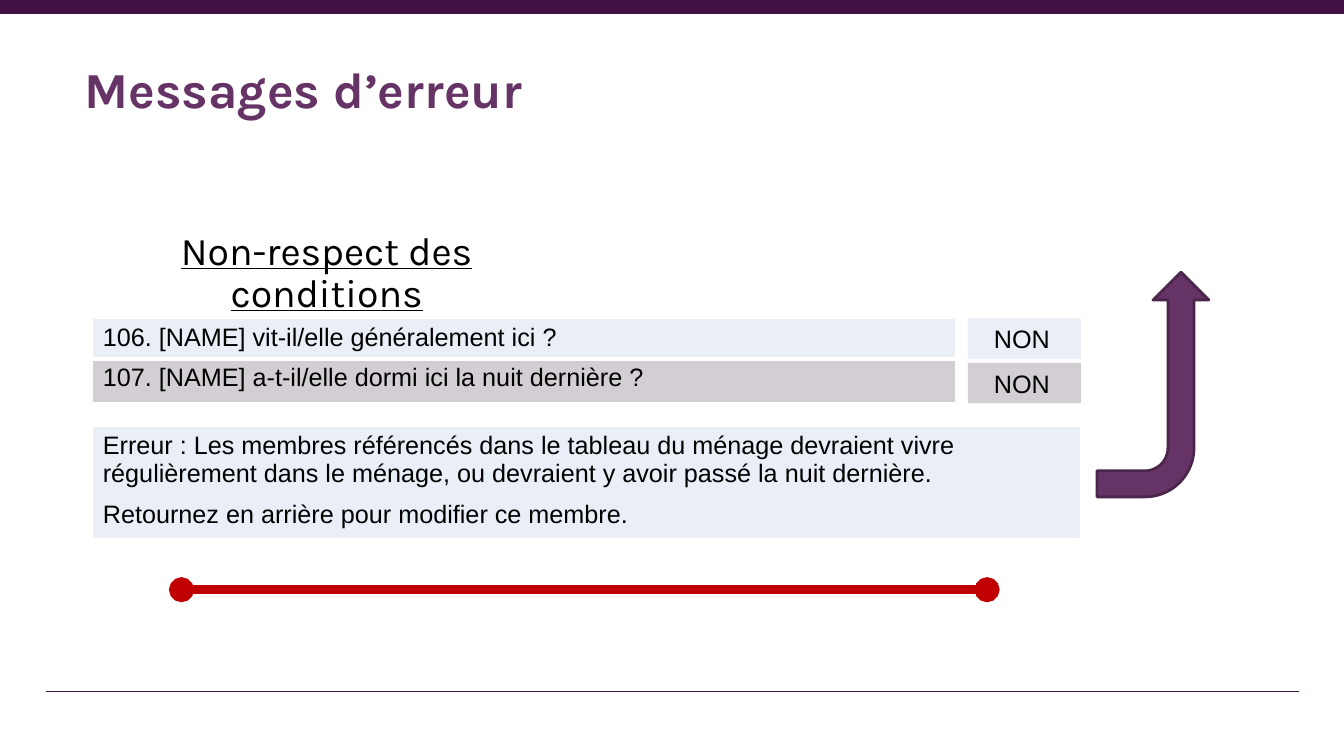
from dataclasses import dataclass

from lxml.etree import SubElement
from pptx import Presentation
from pptx.dml.color import RGBColor
from pptx.enum.shapes import MSO_CONNECTOR, MSO_SHAPE
from pptx.enum.text import PP_ALIGN
from pptx.oxml.ns import qn
from pptx.util import Inches, Pt


@dataclass(frozen=True)
class Theme:
    """Colours, fonts and type sizes of the slide."""
    dark: str = "411044"
    purple: str = "663366"
    outline: str = "4B264B"
    red: str = "C00000"
    light: str = "EAEFF7"
    mauve: str = "D3CED3"
    white: str = "FFFFFF"
    black: str = "000000"
    display: str = "Karla"
    body: str = "Arial"
    title_size: int = 36
    heading_size: int = 28
    body_size: int = 18


THEME = Theme()


def colour(value):
    """Turn a hexadecimal value into a colour."""
    return RGBColor.from_string(value)


def write(frame, text, size=THEME.body_size, font=THEME.body, ink=THEME.black, bold=False,
          underline=False, align=PP_ALIGN.LEFT, spacing=1.0, gap=0):
    """Fill a text frame with one paragraph per line of text."""
    frame.word_wrap = True
    for index, line in enumerate(text.split("\n")):
        para = frame.add_paragraph() if index else frame.paragraphs[0]
        para.alignment = align
        para.line_spacing = spacing
        if index:
            para.space_before = Pt(gap)
        span = para.add_run()
        span.text = line
        span.font.size = Pt(size)
        span.font.name = font
        span.font.bold = bold
        span.font.underline = underline
        span.font.color.rgb = colour(ink)


def add_text(page, box, text, **style):
    """Place a text box with formatted text."""
    label = page.shapes.add_textbox(*map(Inches, box))
    write(label.text_frame, text, **style)


def add_line(page, start, end, ink, width, ends=None):
    """Draw a straight line, optionally with decorated ends."""
    line = page.shapes.add_connector(MSO_CONNECTOR.STRAIGHT, *map(Inches, start + end))
    line.line.color.rgb = colour(ink)
    line.line.width = Pt(width)
    if ends:
        for tag in ("a:headEnd", "a:tailEnd"):
            SubElement(line.line._get_or_add_ln(), qn(tag), type=ends)
    SubElement(line._element.spPr, qn("a:effectLst"))


def add_shape(page, kind, box, fill):
    """Draw a plain filled shape without an outline."""
    shape = page.shapes.add_shape(kind, *map(Inches, box))
    shape.shadow.inherit = False
    shape.fill.solid()
    shape.fill.fore_color.rgb = colour(fill)
    shape.line.fill.background()
    return shape


def border_cell(cell, bottom):
    """Give a cell white borders with its own bottom width."""
    properties = cell._tc.get_or_add_tcPr()
    widths = {"a:lnL": 1, "a:lnR": 1, "a:lnT": 1, "a:lnB": bottom}
    for tag, width in widths.items():
        edge = SubElement(properties, qn(tag), w=str(Pt(width)))
        fill = SubElement(edge, qn("a:solidFill"))
        SubElement(fill, qn("a:srgbClr"), val=THEME.white)


def add_message_table(page, left, top, width, rows):
    """Place a one-column table of rows given as text, height, fill, bottom border."""
    height = sum(row[1] for row in rows)
    frame = page.shapes.add_table(len(rows), 1, *map(Inches, (left, top, width, height)))
    table = frame.table
    table.first_row = table.horz_banding = False
    for index, (text, row_height, fill, bottom) in enumerate(rows):
        table.rows[index].height = Inches(row_height)
        cell = table.cell(index, 0)
        border_cell(cell, bottom)
        cell.fill.solid()
        cell.fill.fore_color.rgb = colour(fill)
        write(cell.text_frame, text, gap=9)


def add_frame(page, width):
    """Draw the top band and the footer rule."""
    add_line(page, (0.46, 6.86), (12.88, 6.86), THEME.dark, 1.25)
    add_line(page, (0, 0.07), (width, 0.07), THEME.dark, 10.25)


def add_answers(page, left, top, width, height, step):
    """Place the answer tiles beside the questions."""
    for index, fill in enumerate((THEME.light, THEME.mauve)):
        row_top = top + index * step
        add_shape(page, MSO_SHAPE.RECTANGLE, (left, row_top, width, height), fill)
        add_text(page, (left + 0.16, row_top, width - 0.32, height), "NON")


def add_return_arrow(page, box):
    """Draw the bent arrow that leads back to the questions."""
    arrow = add_shape(page, MSO_SHAPE.BENT_ARROW, box, THEME.purple)
    for index, value in enumerate((0.233, 0.25, 0.25, 0.438)):
        arrow.adjustments[index] = value
    arrow.rotation = 270
    arrow._element.spPr.find(qn("a:xfrm")).set("flipV", "1")
    arrow.line.color.rgb = colour(THEME.outline)
    arrow.line.width = Pt(2)


def build_error_slide(page, width):
    """Place every part of the error message slide."""
    left, questions_top = 0.92, 3.16
    add_frame(page, width)
    add_text(page, (0.74, 0.53, 11.84, 1.22), "Messages d’erreur", size=THEME.title_size,
             font=THEME.display, ink=THEME.purple, bold=True)
    add_text(page, (0.74, 2.25, 5, 0.67), "Non-respect des conditions", size=THEME.heading_size,
             font=THEME.display, underline=True, align=PP_ALIGN.CENTER, spacing=0.9)
    add_message_table(page, left, questions_top, 8.56, [
        ("106. [NAME] vit-il/elle généralement ici ?", 0.4, THEME.light, 3),
        ("107. [NAME] a-t-il/elle dormi ici la nuit dernière ?", 0.43, THEME.mauve, 1),
    ])
    add_message_table(page, left, 4.23, 9.8, [
        ("Erreur : Les membres référencés dans le tableau du ménage devraient vivre "
         "régulièrement dans le ménage, ou devraient y avoir passé la nuit dernière.\n"
         "Retournez en arrière pour modifier ce membre.", 1.04, THEME.light, 3),
    ])
    add_answers(page, 9.6, questions_top, 1.12, 0.4, 0.44)
    add_line(page, (1.8, 5.85), (9.79, 5.85), THEME.red, 6, ends="oval")
    add_return_arrow(page, (10.32, 3.26, 2.23, 1.11))


def main():
    """Build and save the deck."""
    deck = Presentation()
    width = 13.33
    deck.slide_width, deck.slide_height = Inches(width), Inches(7.5)
    page = deck.slides.add_slide(deck.slide_layouts[6])
    build_error_slide(page, width)
    deck.save("out.pptx")


if __name__ == "__main__":
    main()
